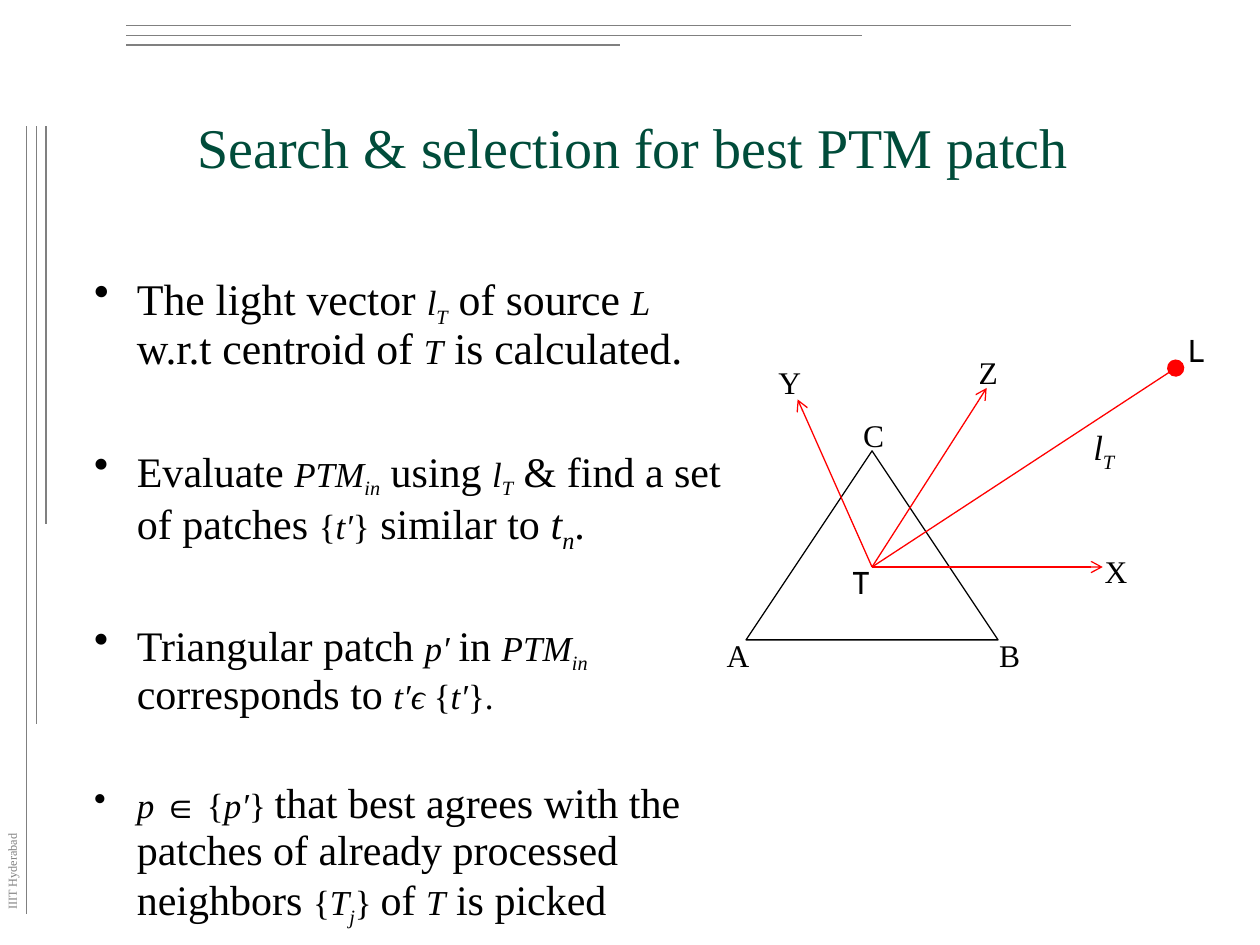
from dataclasses import dataclass
from typing import NamedTuple

from lxml.etree import SubElement
from pptx import Presentation
from pptx.dml.color import RGBColor as Rgb
from pptx.enum.shapes import MSO_CONNECTOR as Link, MSO_SHAPE as Preset
from pptx.enum.text import MSO_ANCHOR as Anchor, MSO_AUTO_SIZE as AutoSize, PP_ALIGN as Align
from pptx.oxml.ns import qn
from pptx.util import Cm, Pt


@dataclass(frozen=True)
class Theme:
    serif: str = "Times New Roman"
    sans: str = "Cabin"
    ink: Rgb = Rgb(0, 0, 0)
    heading: Rgb = Rgb(0x00, 0x4C, 0x3A)
    rule: Rgb = Rgb(0x80, 0x80, 0x80)
    vector: Rgb = Rgb(0xFF, 0, 0)
    title_size: float = 32
    lead_size: float = 25
    body_size: float = 24
    math_size: float = 20
    label_size: float = 18
    footer_size: float = 7
    line_width: float = 0.75
    line_spacing: float = 0.93


THEME = Theme()


class Run(NamedTuple):
    text: str
    size: float = THEME.body_size
    italic: bool = False
    subscript: bool = False
    font: str = THEME.serif
    color: Rgb = THEME.ink


class Point(NamedTuple):
    x: float
    y: float


class Label(NamedTuple):
    runs: list[Run]
    x: float
    y: float
    width: float = 1.7


class Bullet(NamedTuple):
    runs: list[Run]
    space_before: float


def lead(text: str) -> Run:
    return Run(text, THEME.lead_size)


def math(text: str) -> Run:
    return Run(text, THEME.math_size)


def var(text: str, size: float = THEME.math_size) -> Run:
    return Run(text, size, italic=True)


def sub(text: str, size: float = THEME.math_size) -> Run:
    return Run(text, size, italic=True, subscript=True)


def tag(text: str, font: str = THEME.serif) -> list[Run]:
    return [Run(text, THEME.label_size, font=font)]


LIGHT = [var("l"), sub("T")]
PTM_IN = [var("PTM"), sub("in")]
PATCH_SET = [math("{"), var("t′"), math("}")]

BULLETS = [
    Bullet([lead("The light vector "), *LIGHT, lead(" of source "), var("L"),
            lead(" w.r.t centroid of "), var("T"), lead(" is calculated.")], 0),
    Bullet([Run("Evaluate "), *PTM_IN, Run(" using "), *LIGHT,
            Run(" & find a set of patches "), *PATCH_SET, Run(" similar to "),
            var("t", THEME.body_size), sub("n", THEME.body_size), Run(".")], 41),
    Bullet([Run("Triangular patch "), var("p′ "), Run("in "), *PTM_IN,
            Run(" corresponds to "), var("t′ϵ "), *PATCH_SET, math(".")], 40),
    Bullet([var("p"), math(" ∈ {"), var("p′"), math("} "),
            Run("that best agrees with the patches of already processed neighbors "),
            math("{"), var("T"), sub("j"), math("} "), Run("of "), var("T"),
            Run(" is picked")], 36),
]

CENTROID = Point(17.58, 11.43)
VECTORS = [
    (Point(22.23, 11.43), "arrow", "med"),
    (Point(19.89, 7.82), "arrow", "med"),
    (Point(16.08, 8.05), "arrow", "med"),
    (Point(23.7, 7.42), "oval", "lg"),
]
LABELS = [
    Label(tag("A"), 14.4, 12.7, 0.64),
    Label(tag("B"), 19.89, 12.7, 0.64),
    Label(tag("C"), 17.15, 8.26, 0.64),
    Label(tag("X"), 22.02, 11),
    Label(tag("Y"), 15.44, 7.19),
    Label(tag("Z"), 19.48, 6.99),
    Label(tag("L", THEME.sans), 23.7, 6.55, 1.47),
    Label(tag("T", THEME.sans), 16.94, 11.23, 0.84),
    Label(LIGHT, 21.79, 8.46),
]
RULE_START, RULE_GAP = 2.54, 0.2
TOP_RULE_ENDS = [21.59, 17.37, 12.5]
SIDE_RULE_ENDS = [18.42, 14.6, 10.57]


def apply(target, formats: dict) -> None:
    for name, value in formats.items():
        setattr(target, name, value)


def add_runs(paragraph, runs: list[Run]) -> None:
    for part in runs:
        run = paragraph.add_run()
        run.text = part.text
        apply(run.font, {"name": part.font, "size": Pt(part.size), "italic": part.italic})
        run.font.color.rgb = part.color
        if part.subscript:
            run._r.get_or_add_rPr().set("baseline", "-25000")


def add_line(slide, start: Point, end: Point, color: Rgb, tip: str = "", tip_size: str = "med") -> None:
    line = slide.shapes.add_connector(Link.STRAIGHT, Cm(start.x), Cm(start.y), Cm(end.x), Cm(end.y))
    line.line.color.rgb = color
    line.line.width = Pt(THEME.line_width)
    if tip:
        SubElement(line.line._get_or_add_ln(), qn("a:tailEnd"), type=tip, w=tip_size, len=tip_size)
    SubElement(line._element.spPr, qn("a:effectLst"))


def add_text_box(slide, x: float, y: float, width: float, height: float):
    box = slide.shapes.add_textbox(Cm(x), Cm(y), Cm(width), Cm(height))
    box.text_frame.word_wrap = True
    return box


def add_frame_rules(slide) -> None:
    for i, (right, bottom) in enumerate(zip(TOP_RULE_ENDS, SIDE_RULE_ENDS)):
        y, x = 0.51 + i * RULE_GAP, 0.53 + i * RULE_GAP
        add_line(slide, Point(RULE_START, y), Point(right, y), THEME.rule)
        add_line(slide, Point(x, RULE_START), Point(x, bottom), THEME.rule)


def add_affiliation(slide) -> None:
    box = add_text_box(slide, -0.91, 17.15, 2.34, 0.53)
    box.rotation = 270
    paragraph = box.text_frame.paragraphs[0]
    paragraph.line_spacing = THEME.line_spacing
    add_runs(paragraph, [Run("IIIT Hyderabad", THEME.footer_size, color=THEME.rule)])


def fill_title(slide) -> None:
    title = slide.shapes.title
    apply(title, {"left": Cm(1.5), "top": Cm(1.88), "width": Cm(22.53), "height": Cm(2.26)})
    apply(title.text_frame, {"auto_size": AutoSize.NONE, "vertical_anchor": Anchor.MIDDLE,
                             "margin_left": 0, "margin_right": 0, "margin_top": 0, "margin_bottom": 0})
    paragraph = title.text_frame.paragraphs[0]
    apply(paragraph, {"alignment": Align.CENTER, "line_spacing": THEME.line_spacing})
    add_runs(paragraph, [Run("Search & selection for best PTM patch", THEME.title_size, color=THEME.heading)])


def add_bullets(slide) -> None:
    frame = add_text_box(slide, 1.9, 5.51, 12.7, 11.4).text_frame
    apply(frame, {"margin_left": 0, "margin_right": 0, "margin_top": 0, "margin_bottom": 0})
    for i, bullet in enumerate(BULLETS):
        paragraph = frame.add_paragraph() if i else frame.paragraphs[0]
        properties = paragraph._p.get_or_add_pPr()
        apply(paragraph, {"line_spacing": THEME.line_spacing, "space_before": Pt(bullet.space_before)})
        properties.set("marL", str(Cm(0.86)))
        properties.set("indent", str(-Cm(0.86)))
        SubElement(SubElement(properties, qn("a:buClr")), qn("a:srgbClr"), val=str(THEME.ink))
        SubElement(properties, qn("a:buChar"), char="•")
        add_runs(paragraph, bullet.runs)


def add_light_diagram(slide) -> None:
    patch = slide.shapes.add_shape(Preset.ISOSCELES_TRIANGLE, Cm(15.04), Cm(9.09), Cm(5.08), Cm(3.81))
    patch.shadow.inherit = False
    patch.fill.background()
    patch.line.color.rgb = THEME.ink
    patch.line.width = Pt(THEME.line_width)
    for end, tip, tip_size in VECTORS:
        add_line(slide, CENTROID, end, THEME.vector, tip, tip_size)
    for label in LABELS:
        box = add_text_box(slide, label.x, label.y, label.width, 1.02)
        add_runs(box.text_frame.paragraphs[0], label.runs)


def main() -> None:
    deck = Presentation()
    apply(deck, {"slide_width": Cm(25.4), "slide_height": Cm(19.05)})
    slide = deck.slides.add_slide(deck.slide_layouts[5])
    add_frame_rules(slide)
    add_affiliation(slide)
    fill_title(slide)
    add_bullets(slide)
    add_light_diagram(slide)
    deck.save("out.pptx")


if __name__ == "__main__":
    main()
